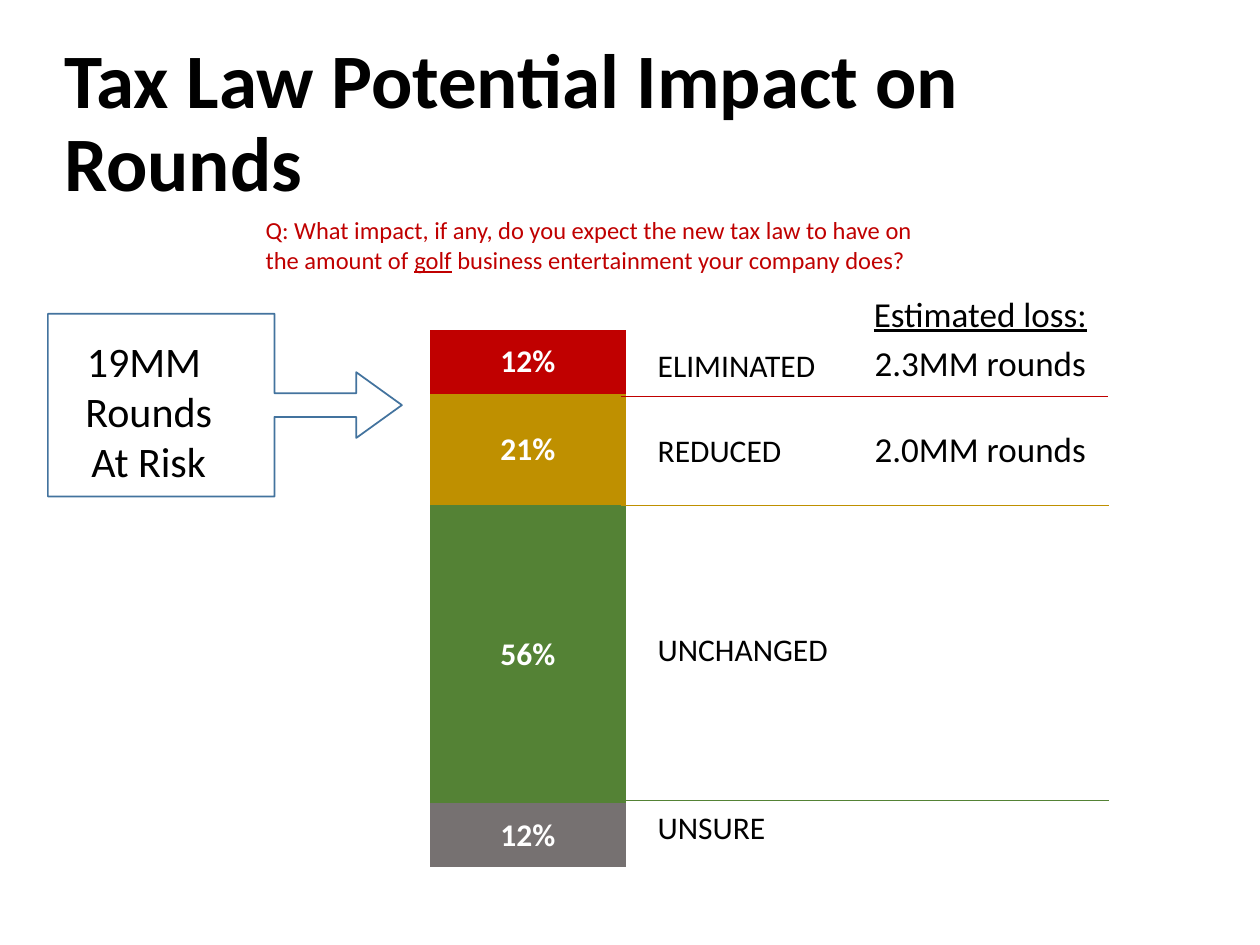
from dataclasses import dataclass

from lxml.etree import SubElement
from pptx import Presentation
from pptx.chart.data import CategoryChartData
from pptx.dml.color import RGBColor
from pptx.enum.chart import XL_CHART_TYPE as ChartType, XL_LABEL_POSITION as LabelPosition
from pptx.enum.shapes import MSO_CONNECTOR as Connector, MSO_SHAPE as Shape
from pptx.enum.text import MSO_ANCHOR as Anchor, MSO_AUTO_SIZE as AutoSize, PP_ALIGN as Align
from pptx.oxml.ns import qn
from pptx.util import Inches, Pt

FONT = "Calibri"
BLACK = RGBColor(0x00, 0x00, 0x00)
WHITE = RGBColor(0xFF, 0xFF, 0xFF)
RED = RGBColor(0xC0, 0x00, 0x00)
GOLD = RGBColor(0xBF, 0x90, 0x00)
GREEN = RGBColor(0x54, 0x82, 0x35)
GRAY = RGBColor(0x76, 0x71, 0x71)
BLUE = RGBColor(0x43, 0x73, 0x9E)


@dataclass(frozen=True)
class Answer:
    label: str
    share: float
    color: RGBColor
    row_height: float


@dataclass(frozen=True)
class Divider:
    y: float
    right: float
    color: RGBColor


# Answers from the top of the column to the bottom
ANSWERS = [
    Answer("ELIMINATED", 0.12, RED, 0.5),
    Answer("REDUCED", 0.21, GOLD, 0.85),
    Answer("UNCHANGED", 0.56, GREEN, 2.31),
    Answer("UNSURE", 0.12, GRAY, 0.51),
]
DIVIDERS = [
    Divider(3.15, 8.79, RED),
    Divider(4.01, 8.8, GOLD),
    Divider(6.35, 8.8, GREEN),
]
DIVIDER_LEFT = 4.93


def style_font(font, size: float, color: RGBColor, bold: bool = False,
               underline: bool = False) -> None:
    font.name = FONT
    font.size = Pt(size)
    font.bold = bold
    font.underline = underline
    font.color.rgb = color


def write(paragraph, text: str, *, size: float, color: RGBColor = BLACK, bold: bool = False,
          underline: bool = False, align: Align = Align.LEFT, after: float = 0) -> None:
    paragraph.alignment = align
    paragraph.space_after = Pt(after)
    run = paragraph.add_run()
    run.text = text
    style_font(run.font, size, color, bold, underline)


def add_text_frame(slide, left: float, top: float, width: float, height: float,
                   wrap: bool = True):
    box = slide.shapes.add_textbox(Inches(left), Inches(top), Inches(width), Inches(height))
    frame = box.text_frame
    frame.word_wrap = wrap
    frame.auto_size = AutoSize.SHAPE_TO_FIT_TEXT
    return frame


def add_title(slide) -> None:
    title = slide.shapes.title
    title.left, title.top = Inches(0.41), Inches(0.27)
    title.width, title.height = Inches(8.9), Inches(1.45)
    title.text_frame.vertical_anchor = Anchor.MIDDLE
    heading = title.text_frame.paragraphs[0]
    heading.line_spacing = 0.9
    write(heading, "Tax Law Potential Impact on Rounds", size=44, bold=True)


def add_risk_text(slide) -> None:
    risk = add_text_frame(slide, 0.57, 2.61, 1.22, 1.31, wrap=False)
    for index, text in enumerate(["19MM ", "Rounds", "At Risk"]):
        paragraph = risk.add_paragraph() if index else risk.paragraphs[0]
        write(paragraph, text, size=24, align=Align.CENTER)


def add_answer_chart(slide) -> None:
    stack = ANSWERS[::-1]
    data = CategoryChartData(number_format="0%")
    data.categories = ["1"]
    for number, answer in enumerate(stack, start=1):
        data.add_series(f"Series {number}", [answer.share])
    chart = slide.shapes.add_chart(ChartType.COLUMN_STACKED_100, Inches(2.17), Inches(2.53),
                                   Inches(4.04), Inches(4.44), data).chart
    chart.has_legend = False
    chart.has_title = False
    style_font(chart.font, 18, WHITE, bold=True)
    chart.category_axis.visible = False
    chart.value_axis.visible = False
    chart.value_axis.has_major_gridlines = False
    plot = chart.plots[0]
    plot.vary_by_categories = False
    plot.overlap = 100
    plot.gap_width = 150
    for series, answer in zip(plot.series, stack):
        series.format.fill.solid()
        series.format.fill.fore_color.rgb = answer.color
        labels = series.data_labels
        labels.show_value = True
        labels.number_format = "0%"
        labels.number_format_is_linked = False
        labels.position = LabelPosition.CENTER
        style_font(labels.font, 18, WHITE, bold=True)


def add_answer_table(slide) -> None:
    height = sum(answer.row_height for answer in ANSWERS)
    table = slide.shapes.add_table(len(ANSWERS), 1, Inches(5.12), Inches(2.66),
                                   Inches(2.04), Inches(height)).table
    table.first_row = False
    table.horz_banding = False
    for row, answer in zip(table.rows, ANSWERS):
        row.height = Inches(answer.row_height)
        cell = row.cells[0]
        cell.fill.background()
        cell.vertical_anchor = Anchor.MIDDLE
        write(cell.text_frame.paragraphs[0], answer.label, size=18)


def add_losses(slide) -> None:
    losses = add_text_frame(slide, 6.59, 2.27, 2.38, 1.52)
    write(losses.paragraphs[0], "Estimated loss:", size=20, underline=True,
          align=Align.CENTER, after=4)
    write(losses.add_paragraph(), "2.3MM rounds", size=20, align=Align.CENTER, after=25)
    write(losses.add_paragraph(), "2.0MM rounds", size=20, align=Align.CENTER)


def add_risk_callout(slide) -> None:
    callout = slide.shapes.add_shape(Shape.RIGHT_ARROW_CALLOUT, Inches(0.38), Inches(2.49),
                                     Inches(2.81), Inches(1.45))
    callout.shadow.inherit = False
    callout.fill.background()
    callout.line.color.rgb = BLUE
    callout.line.width = Pt(1)
    for index, value in enumerate([0.13, 0.18, 0.25, 0.64]):
        callout.adjustments[index] = value


def add_question(slide) -> None:
    question = add_text_frame(slide, 2.01, 1.66, 5.56, 0.57).paragraphs[0]
    write(question, "Q: What impact, if any, do you expect the new tax law to have on "
          "the amount of ", size=14, color=RED)
    write(question, "golf", size=14, color=RED, underline=True)
    write(question, " business entertainment your company does?", size=14, color=RED)


def add_divider(slide, divider: Divider) -> None:
    line = slide.shapes.add_connector(Connector.STRAIGHT, Inches(DIVIDER_LEFT),
                                      Inches(divider.y), Inches(divider.right),
                                      Inches(divider.y))
    line.line.color.rgb = divider.color
    line.line.width = Pt(0.5)
    SubElement(line._element.spPr, qn("a:effectLst"))


def main() -> None:
    deck = Presentation()
    deck.slide_width, deck.slide_height = Inches(10), Inches(7.5)
    slide = deck.slides.add_slide(deck.slide_layouts.get_by_name("Title Only"))

    # Heading and the players at risk
    add_title(slide)
    add_risk_text(slide)

    # Survey answers with their labels and losses
    add_answer_chart(slide)
    add_answer_table(slide)
    add_losses(slide)
    add_risk_callout(slide)
    add_question(slide)

    # Lines between the answers
    for divider in DIVIDERS:
        add_divider(slide, divider)

    deck.save("out.pptx")


if __name__ == "__main__":
    main()
